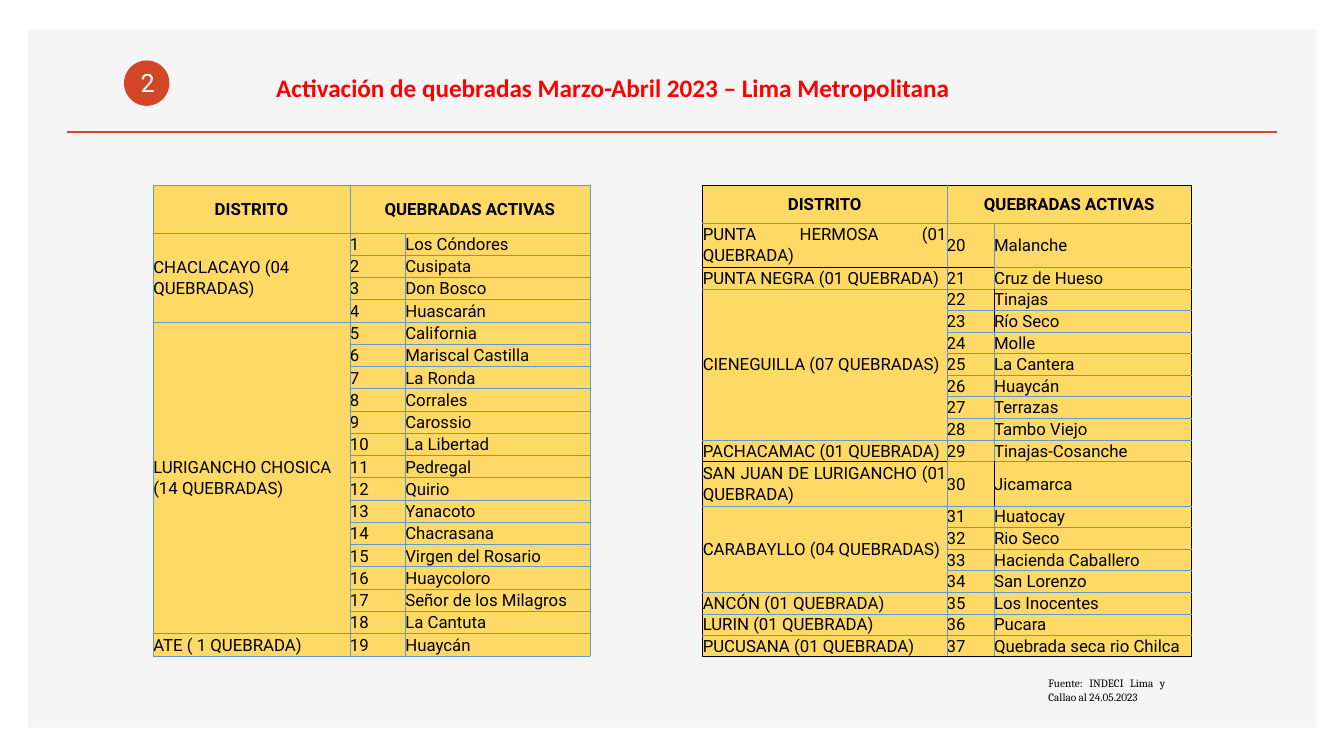
import pptx
import pptx.dml.color
import pptx.enum.shapes
import pptx.enum.text
import pptx.oxml
import pptx.oxml.ns
import pptx.util
from dataclasses import dataclass

Inches, Pt = pptx.util.Inches, pptx.util.Pt
RGB = pptx.dml.color.RGBColor.from_string
ALIGN = pptx.enum.text.PP_ALIGN
ANCHOR = pptx.enum.text.MSO_ANCHOR
SHAPE = pptx.enum.shapes.MSO_SHAPE


@dataclass
class Theme:
    panel: str = "F5F5F5"
    accent: str = "D24726"
    title: str = "FF0000"
    text: str = "000000"
    badge_text: str = "FFFFFF"
    cell: str = "FFD966"
    grid: str = "5B9BD5"
    frame: str = "000000"
    title_size: int = 18
    table_size: int = 12
    source_size: int = 8
    title_font: str = "Calibri"
    body_font: str = "Roboto"
    source_font: str = "Cambria"


def write(tf, text, *, size, font, color, bold=False, align=ALIGN.LEFT, spacing=1.07, after=8):
    p = tf.paragraphs[0]
    p.alignment, p.line_spacing, p.space_after = align, spacing, Pt(after)
    r = p.add_run()
    r.text = text
    r.font.size, r.font.name, r.font.bold = Pt(size), font, bold
    r.font.color.rgb = RGB(color)


def set_borders(cell, edges):
    """edges maps L, R, T and B to (colour, points)."""
    tcPr = cell._tc.get_or_add_tcPr()
    for side in "LRTB":
        color, width = edges[side]
        tcPr.append(pptx.oxml.parse_xml(
            f'<a:ln{side} {pptx.oxml.ns.nsdecls("a")} w="{Pt(width)}">'
            f'<a:solidFill><a:srgbClr val="{color}"/></a:solidFill></a:ln{side}>'))


class Deck:
    def __init__(self, theme):
        self.theme = theme
        self.prs = pptx.Presentation()
        self.prs.slide_width, self.prs.slide_height = Inches(13.33), Inches(7.5)
        self.slide = self.prs.slides.add_slide(self.prs.slide_layouts[6])

    def shape(self, kind, at, fill):
        sp = self.slide.shapes.add_shape(kind, *map(Inches, at))
        sp.shadow.inherit = False
        sp.fill.solid()
        sp.fill.fore_color.rgb = RGB(fill)
        sp.line.fill.background()
        return sp

    def rule(self, x1, x2, y, color, width):
        line = self.slide.shapes.add_connector(
            pptx.enum.shapes.MSO_CONNECTOR.STRAIGHT, *map(Inches, (x1, y, x2, y)))
        line.line.color.rgb, line.line.width = RGB(color), Pt(width)
        line._element.spPr.append(
            pptx.oxml.parse_xml(f'<a:effectLst {pptx.oxml.ns.nsdecls("a")}/>'))

    def text(self, at, text, anchor=ANCHOR.TOP, **fmt):
        sp = self.slide.shapes.add_textbox(*map(Inches, at))
        tf = sp.text_frame
        tf.word_wrap, tf.vertical_anchor = True, anchor
        write(tf, text, **fmt)
        return sp

    def badge(self, text):
        disc = self.shape(SHAPE.OVAL, (1.23, 0.6, 0.45, 0.45), self.theme.accent)
        label = self.text((1.16, 0.62, 0.61, 0.4), text, size=self.theme.title_size,
                          font=self.theme.body_font, color=self.theme.badge_text,
                          align=ALIGN.CENTER, spacing=1, after=0)
        self.slide.shapes.add_group_shape([disc, label])

    def streams_table(self, at, cols, heights, groups, first, align, edges_of):
        """Number the streams from first on; each district spans its own streams."""
        t = self.theme
        table = self.slide.shapes.add_table(len(heights), 3, *map(Inches, at)).table
        table.first_row = table.horz_banding = False
        for column, width in zip(table.columns, cols):
            column.width = Inches(width)
        for row, height in zip(table.rows, heights):
            row.height = Inches(height)

        texts = {(0, 0): "DISTRITO", (0, 1): "QUEBRADAS ACTIVAS"}
        table.cell(0, 1).merge(table.cell(0, 2))
        row = 1
        for district, streams in groups:
            texts[row, 0] = district
            if len(streams) > 1:
                table.cell(row, 0).merge(table.cell(row + len(streams) - 1, 0))
            for name in streams:
                texts[row, 1], texts[row, 2] = str(first + row - 1), name
                row += 1

        for r in range(len(heights)):
            for c in range(3):
                cell = table.cell(r, c)
                set_borders(cell, edges_of(r, c))
                cell.fill.solid()
                cell.fill.fore_color.rgb = RGB(t.cell)
                cell.margin_left = cell.margin_right = cell.margin_top = cell.margin_bottom = 0
                cell.vertical_anchor = ANCHOR.MIDDLE
                if (r, c) in texts:
                    write(cell.text_frame, texts[r, c], size=t.table_size, font=t.body_font,
                          color=t.text, bold=r == 0, align=ALIGN.CENTER if r == 0 else align)


EAST = [
    ("CHACLACAYO (04 QUEBRADAS)", ["Los Cóndores", "Cusipata", "Don Bosco", "Huascarán"]),
    ("LURIGANCHO CHOSICA (14 QUEBRADAS)", [
        "California", "Mariscal Castilla", "La Ronda", "Corrales", "Carossio", "La Libertad",
        "Pedregal", "Quirio", "Yanacoto", "Chacrasana", "Virgen del Rosario", "Huaycoloro",
        "Señor de los Milagros", "La Cantuta"]),
    ("ATE ( 1 QUEBRADA)", ["Huaycán"]),
]
OTHER = [
    ("PUNTA HERMOSA (01 QUEBRADA)", ["Malanche"]),
    ("PUNTA NEGRA (01 QUEBRADA)", ["Cruz de Hueso"]),
    ("CIENEGUILLA (07 QUEBRADAS)", ["Tinajas", "Río Seco", "Molle", "La Cantera", "Huaycán",
                                    "Terrazas", "Tambo Viejo"]),
    ("PACHACAMAC (01 QUEBRADA)", ["Tinajas-Cosanche"]),
    ("SAN JUAN DE LURIGANCHO (01 QUEBRADA)", ["Jicamarca"]),
    ("CARABAYLLO (04 QUEBRADAS)", ["Huatocay", "Rio Seco", "Hacienda Caballero", "San Lorenzo"]),
    ("ANCÓN (01 QUEBRADA)", ["Los Inocentes"]),
    ("LURIN (01 QUEBRADA)", ["Pucara"]),
    ("PUCUSANA (01 QUEBRADA)", ["Quebrada seca rio Chilca"]),
]
TABLE_HEIGHT = 4.67
DARK_BELOW = {(1, 0), (1, 1), (10, 0)}
DARK_BEFORE_NAME = {3, 4, 11}


def main():
    t = Theme()
    deck = Deck(t)
    deck.shape(SHAPE.RECTANGLE, (0.28, 0.29, 12.78, 6.93), t.panel)
    deck.rule(0.66, 12.67, 1.31, t.accent, 2)
    deck.text((2.32, 0.56, 7.52, 0.51), "Activación de quebradas Marzo-Abril 2023 – Lima Metropolitana",
              anchor=ANCHOR.BOTTOM, size=t.title_size, font=t.title_font, color=t.title,
              bold=True, align=ALIGN.CENTER)
    deck.badge("2")

    def plain_edges(r, c):
        return dict.fromkeys("LRTB", (t.grid, 0.5))

    east_heights = [0.47] + [(TABLE_HEIGHT - 0.47) / 19] * 19
    deck.streams_table((1.52, 1.84, 4.33, TABLE_HEIGHT), (1.95, 0.55, 1.83), east_heights,
                       EAST, 1, ALIGN.LEFT, plain_edges)

    tall_rows = {0: 0.37, 1: 0.44, 11: 0.44}
    row_height = (TABLE_HEIGHT - sum(tall_rows.values())) / 16
    other_heights = [tall_rows.get(r, row_height) for r in range(19)]

    def framed_edges(r, c):
        thin, dark, frame = (t.grid, 0.25), (t.frame, 0.25), (t.frame, 1)
        name_edge = dark if r in DARK_BEFORE_NAME else thin
        return {
            "L": frame if c == 0 else name_edge if c == 2 else thin,
            "R": frame if c == 2 or (r, c) == (0, 1) else name_edge if c == 1 else thin,
            "T": frame if r == 0 else dark if (r - 1, c) in DARK_BELOW else thin,
            "B": frame if r == 18 else dark if (r, c) in DARK_BELOW else thin,
        }

    deck.streams_table((6.97, 1.84, 4.85, TABLE_HEIGHT), (2.42, 0.47, 1.96), other_heights,
                       OTHER, 20, ALIGN.JUSTIFY, framed_edges)
    deck.text((10.3, 6.65, 1.36, 0.38), "Fuente: INDECI Lima y Callao al 24.05.2023",
              size=t.source_size, font=t.source_font, color=t.text, align=ALIGN.JUSTIFY)
    deck.prs.save("out.pptx")


if __name__ == "__main__":
    main()
